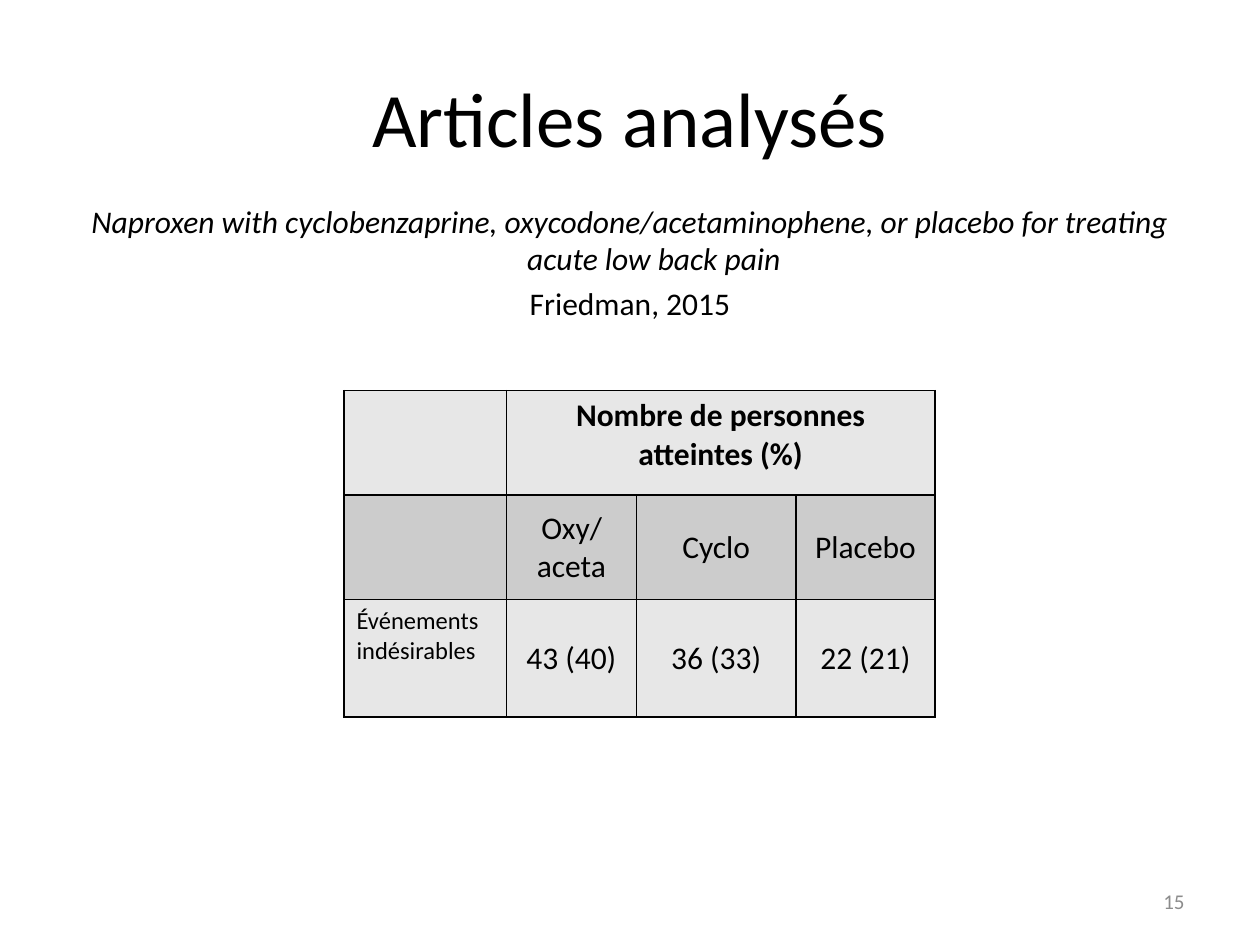
from lxml import etree
from pptx import Presentation
from pptx import util as u
from pptx.dml.color import RGBColor
from pptx.enum import text
from pptx.oxml.ns import qn

CENTER, RIGHT = text.PP_ALIGN.CENTER, text.PP_ALIGN.RIGHT
MIDDLE = text.MSO_ANCHOR.MIDDLE
BLACK, GREY = "000000", "8C8C8C"
LIGHT, DARK = "E7E7E7", "CCCCCC"


def color(value):
    return RGBColor.from_string(value)


class SlideBuilder:
    font_name = "Calibri"

    def __init__(self, slide):
        self.slide = slide

    def place(self, shape, *bounds):
        for name, value in zip(("left", "top", "width", "height"), bounds):
            setattr(shape, name, u.Inches(value))

    def set_text(self, para, words, size, align=None, ink=BLACK, **font_format):
        para.text = words
        para.alignment = align
        values = {"name": self.font_name, "size": u.Pt(size), **font_format}
        for span in para.runs:
            for name, value in values.items():
                setattr(span.font, name, value)
            span.font.color.rgb = color(ink)

    def title(self, words, *bounds):
        box = self.slide.shapes.title
        self.place(box, *bounds)
        box.text_frame.vertical_anchor = MIDDLE
        self.set_text(box.text_frame.paragraphs[0], words, 44, CENTER)

    def body(self, lines, *bounds):
        """Fill the body with (words, italic) lines, hanging and unbulleted."""
        box = self.slide.placeholders[1]
        self.place(box, *bounds)
        frame = box.text_frame
        for index, (words, italic) in enumerate(lines):
            para = frame.add_paragraph() if index else frame.paragraphs[0]
            properties = para._p.get_or_add_pPr()
            properties.set("marL", str(u.Inches(0.38)))
            properties.set("indent", str(-u.Inches(0.38)))
            etree.SubElement(properties, qn("a:buNone"))
            para.space_before = u.Pt(4 if index else 0)
            self.set_text(para, words, 18, CENTER, italic=italic)

    def border(self, cell):
        properties = cell._tc.get_or_add_tcPr()
        for index, side in enumerate(("lnL", "lnR", "lnT", "lnB")):
            line = etree.Element(qn(f"a:{side}"), w=str(u.Pt(1)))
            fill = etree.SubElement(line, qn("a:solidFill"))
            etree.SubElement(fill, qn("a:srgbClr"), val=BLACK)
            properties.insert(index, line)

    def table(self, rows, fills, widths, heights, left, top):
        frame = self.slide.shapes.add_table(
            len(rows), len(widths), u.Inches(left), u.Inches(top),
            u.Inches(sum(widths)), u.Inches(sum(heights)))
        grid = frame.table
        for column, width in zip(grid.columns, widths):
            column.width = u.Inches(width)
        for row, height in zip(grid.rows, heights):
            row.height = u.Inches(height)
        for r, (words_row, fill) in enumerate(zip(rows, fills)):
            for c, words in enumerate(words_row):
                cell = grid.cell(r, c)
                cell.fill.solid()
                cell.fill.fore_color.rgb = color(fill)
                self.border(cell)
                is_header, is_label = r == 0, c == 0
                if not (is_header or is_label):
                    cell.vertical_anchor = MIDDLE
                if words:
                    self.set_text(cell.text_frame.paragraphs[0], words,
                                  14 if is_label else 18,
                                  None if is_label else CENTER, bold=is_header)
        grid.cell(0, 1).merge(grid.cell(0, len(widths) - 1))

    def page_number(self, words, *bounds):
        box = self.slide.shapes.add_textbox(*map(u.Inches, bounds))
        box.text_frame.word_wrap = True
        box.text_frame.vertical_anchor = MIDDLE
        self.set_text(box.text_frame.paragraphs[0], words, 12, RIGHT, GREY)


def main():
    deck = Presentation()
    deck.slide_width, deck.slide_height = u.Inches(10), u.Inches(7.5)
    page = SlideBuilder(deck.slides.add_slide(deck.slide_layouts[1]))
    page.title("Articles analysés", 0.5, 0.3, 9, 1.25)
    page.body([
        ("Naproxen with cyclobenzaprine, oxycodone/acetaminophene, "
         "or placebo for treating acute low back pain", True),
        ("Friedman, 2015", False),
    ], 0.5, 1.55, 9, 5.15)
    page.table(
        rows=[
            ("", "Nombre de personnes atteintes (%)", "", ""),
            ("", "Oxy/aceta", "Cyclo", "Placebo"),
            ("Événements indésirables", "43 (40)", "36 (33)", "22 (21)"),
        ],
        fills=(LIGHT, DARK, LIGHT),
        widths=(1.29, 1.03, 1.27, 1.1),
        heights=(0.83, 0.83, 0.93),
        left=2.73, top=3.1)
    page.page_number("15", 7.17, 6.95, 2.33, 0.4)
    deck.save("out.pptx")


if __name__ == "__main__":
    main()
